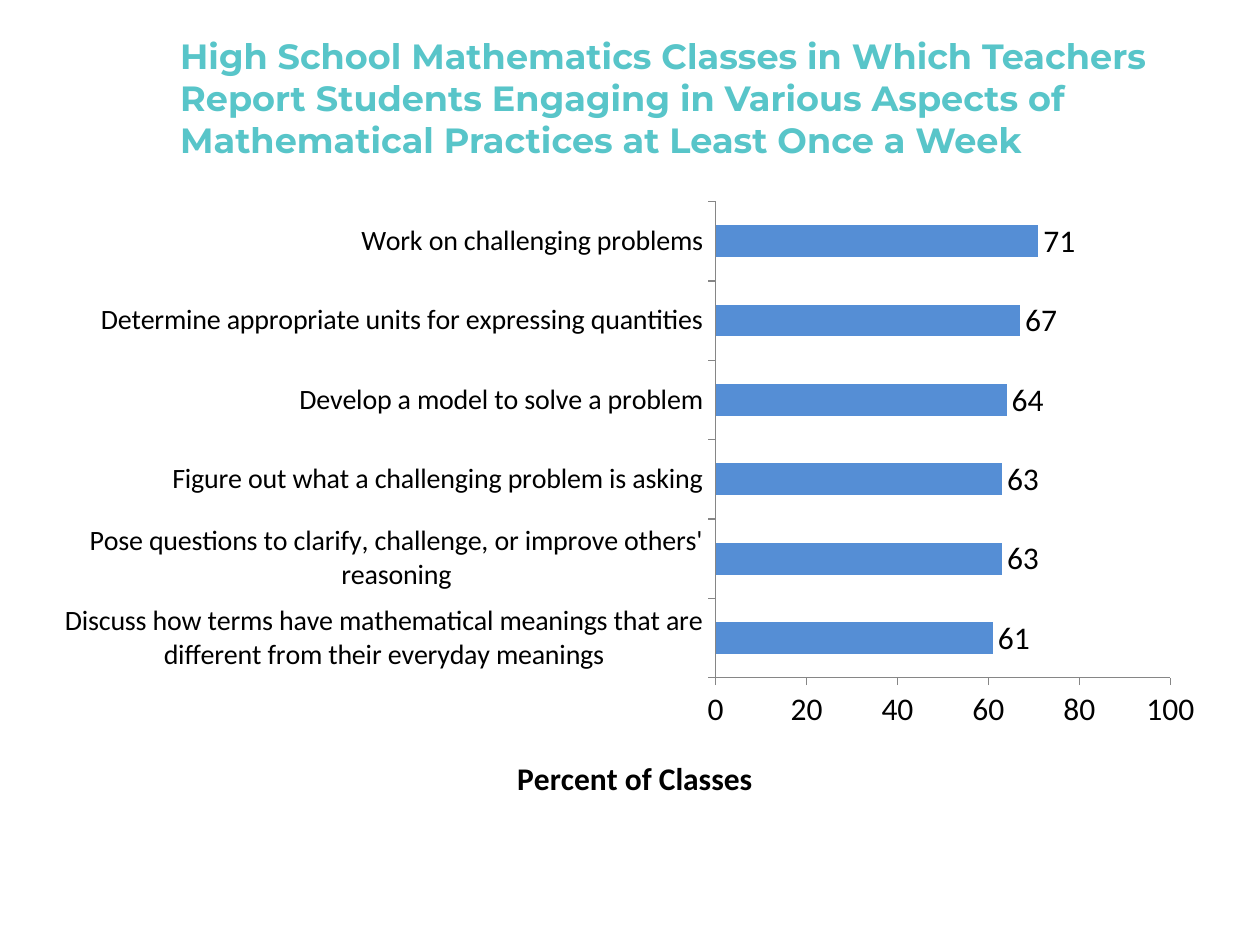
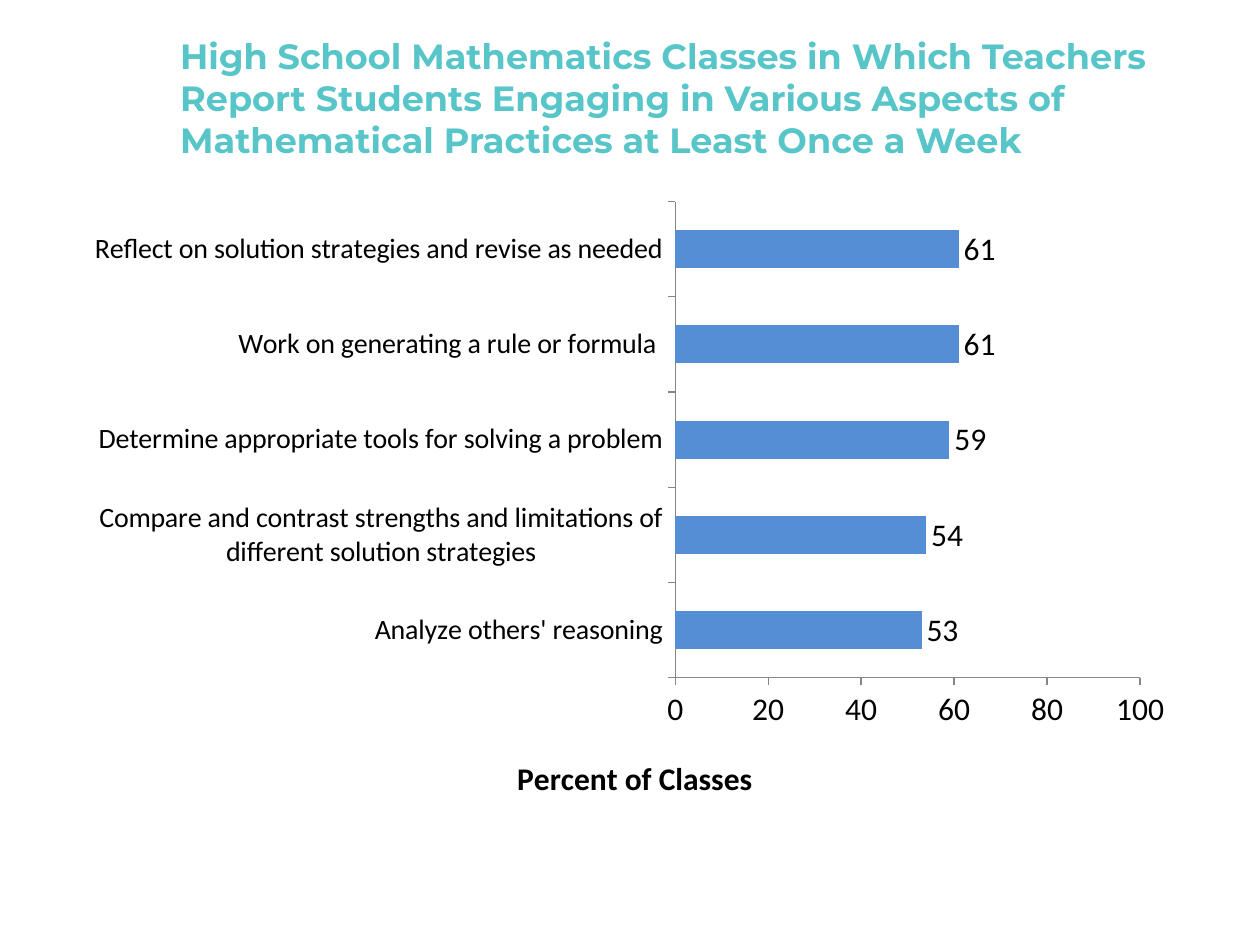
from dataclasses import dataclass

from lxml import etree
from pptx import Presentation
from pptx import util as u
from pptx.chart.data import CategoryChartData
from pptx.dml.color import RGBColor
from pptx.enum import chart as ch, text as tx
from pptx.oxml.ns import qn

TEAL, BLUE, GREY, BLACK = "58C5C9", "558ED5", "868686", "000000"
HEAD = (
    "High School Mathematics Classes in Which Teachers Report Students "
    "Engaging in Various Aspects of Mathematical Practices at Least Once a Week"
)
TOP, HIGH = 1.5, 5.0


@dataclass
class Panel:
    left: float
    width: float
    start: float
    end: float
    rows: dict[str, int]


PANELS = [
    Panel(0.33, 9.33, 5.68, 9.29, {
        "Discuss how terms have mathematical meanings that are different from their everyday meanings": 61,
        "Pose questions to clarify, challenge, or improve others' reasoning": 63,
        "Figure out what a challenging problem is asking": 63,
        "Develop a model to solve a problem": 64,
        "Determine appropriate units for expressing quantities": 67,
        "Work on challenging problems": 71,
    }),
    Panel(0.58, 8.83, 5.36, 9.05, {
        "Analyze others' reasoning": 53,
        "Compare and contrast strengths and limitations of different solution strategies": 54,
        "Determine appropriate tools for solving a problem": 59,
        "Work on generating a rule or formula ": 61,
        "Reflect on solution strategies and revise as needed": 61,
    }),
]


def style(font, size: float, color: str, face: str = "Calibri", bold: bool = False) -> None:
    font.size, font.name, font.bold = u.Pt(size), face, bold
    font.color.rgb = RGBColor.from_string(color)


def place(node, index: int, inner: bool, **parts: float) -> None:
    for old in node.findall(qn("c:layout")):
        node.remove(old)
    layout = etree.Element(qn("c:layout"))
    manual = etree.SubElement(layout, qn("c:manualLayout"))
    if inner:
        etree.SubElement(manual, qn("c:layoutTarget")).set("val", "inner")
    for tag in ("xMode", "yMode"):
        etree.SubElement(manual, qn(f"c:{tag}")).set("val", "edge")
    for tag, part in parts.items():
        etree.SubElement(manual, qn(f"c:{tag}")).set("val", f"{part:.4f}")
    node.insert(index, layout)


def add_head(slide) -> None:
    head = slide.shapes.title
    head.left, head.top = u.Inches(1.33), u.Inches(0.3)
    head.width, head.height = u.Inches(8.17), u.Inches(0.95)
    frame = head.text_frame
    frame.text = HEAD
    frame.auto_size = tx.MSO_AUTO_SIZE.NONE
    frame.vertical_anchor = tx.MSO_ANCHOR.MIDDLE
    para = frame.paragraphs[0]
    para.alignment = tx.PP_ALIGN.LEFT
    style(para.runs[0].font, 20, TEAL, "Montserrat", True)


def add_bars(slide, panel: Panel) -> None:
    data = CategoryChartData()
    data.categories = list(panel.rows)
    data.add_series("Series 1", list(panel.rows.values()))
    chart = slide.shapes.add_chart(
        ch.XL_CHART_TYPE.BAR_CLUSTERED, u.Inches(panel.left), u.Inches(TOP),
        u.Inches(panel.width), u.Inches(HIGH), data).chart
    chart.has_legend = chart.has_title = False
    style(chart.font, 18, BLACK)

    plot = chart.plots[0]
    plot.gap_width, plot.vary_by_categories = 150, False
    fill = plot.series[0].format.fill
    fill.solid()
    fill.fore_color.rgb = RGBColor.from_string(BLUE)
    plot.has_data_labels = True
    labels = plot.data_labels
    labels.show_value = True
    labels.position = ch.XL_LABEL_POSITION.OUTSIDE_END
    style(labels.font, 18, BLACK)

    for axis, size in ((chart.category_axis, 16), (chart.value_axis, 18)):
        axis.has_major_gridlines = False
        axis.major_tick_mark = ch.XL_TICK_MARK.OUTSIDE
        axis.minor_tick_mark = ch.XL_TICK_MARK.NONE
        axis.format.line.color.rgb = RGBColor.from_string(GREY)
        axis.format.line.width = u.Pt(0.75)
        style(axis.tick_labels.font, size, BLACK)

    scale = chart.value_axis
    scale.minimum_scale, scale.maximum_scale, scale.major_unit = 0, 100, 20
    scale.has_title = True
    frame = scale.axis_title.text_frame
    frame.text = "Percent of Classes"
    style(frame.paragraphs[0].runs[0].font, 18, BLACK, bold=True)

    place(scale.axis_title.element, 1, False,
          x=(4.06 - panel.left) / panel.width, y=(5.96 - TOP) / HIGH)
    area = chart.element.find(f".//{qn('c:plotArea')}")
    place(area, 0, True,
          x=(panel.start - panel.left) / panel.width, y=(1.6 - TOP) / HIGH,
          w=(panel.end - panel.start) / panel.width, h=3.78 / HIGH)


def main() -> None:
    deck = Presentation()
    deck.slide_width, deck.slide_height = u.Inches(10), u.Inches(7.5)
    for panel in PANELS:
        slide = deck.slides.add_slide(deck.slide_layouts[5])
        add_head(slide)
        add_bars(slide, panel)
    deck.save("out.pptx")


if __name__ == "__main__":
    main()
